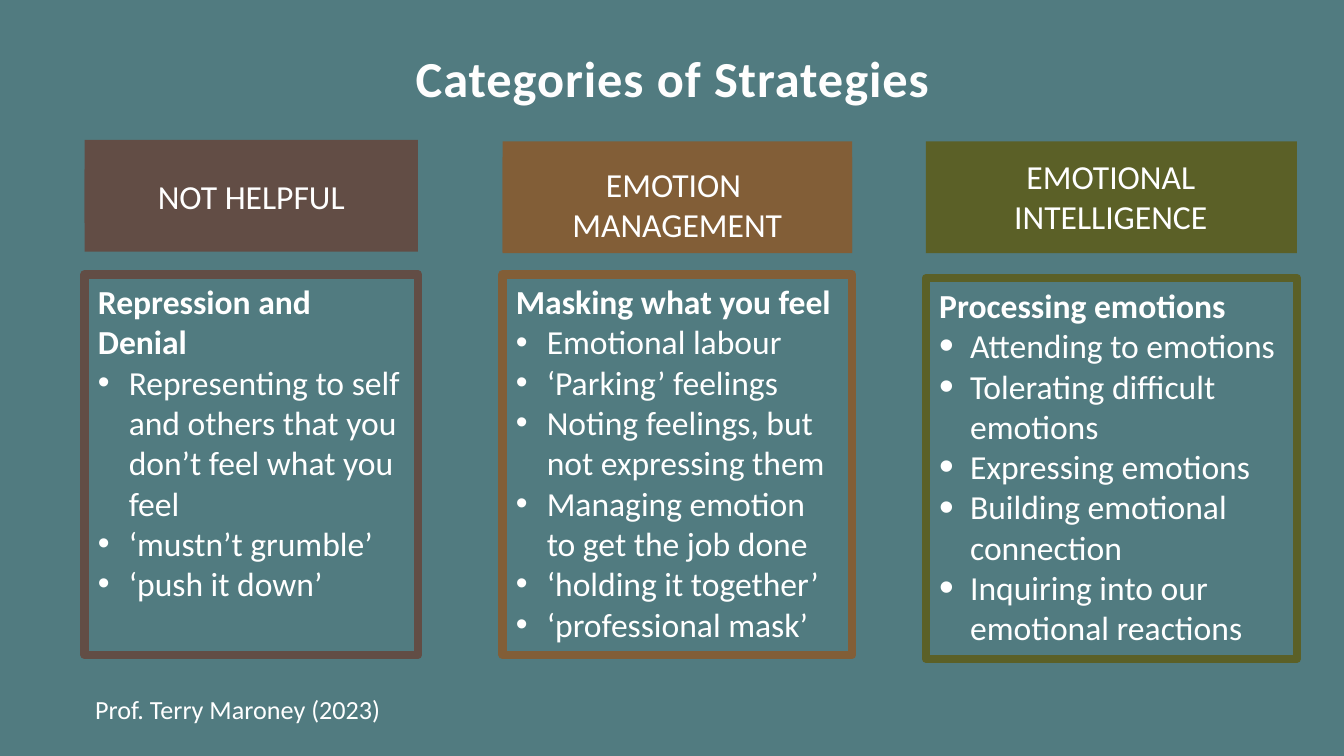
"""Build the slide "Categories of Strategies": three headed columns of strategies."""
import pptx
import pptx.dml.color
import pptx.enum.shapes
import pptx.enum.text
import pptx.oxml
import pptx.oxml.ns
import pptx.util

RGBColor = pptx.dml.color.RGBColor
TEAL = RGBColor(0x51, 0x7B, 0x80)
BROWN = RGBColor(0x62, 0x4D, 0x45)
OCHRE = RGBColor(0x82, 0x5E, 0x37)
OLIVE = RGBColor(0x5B, 0x60, 0x27)
WHITE = RGBColor(0xFF, 0xFF, 0xFF)
OFF_WHITE = RGBColor(0xFE, 0xFE, 0xFE)

CENTER = pptx.enum.text.PP_ALIGN.CENTER
LEFT = pptx.enum.text.PP_ALIGN.LEFT
TOP = pptx.enum.text.MSO_ANCHOR.TOP
GROW = pptx.enum.text.MSO_AUTO_SIZE.SHAPE_TO_FIT_TEXT
RECTANGLE = pptx.enum.shapes.MSO_SHAPE.RECTANGLE
INDENT = pptx.util.Inches(0.23)
LARGE_BULLET = '<a:buClr {0}><a:srgbClr val="FFFFFF"/></a:buClr>', '<a:buSzPct {0} val="125000"/>'
BULLET = '<a:buFont {0} typeface="Arial"/>', '<a:buChar {0} char="•"/>'

deck = pptx.Presentation()
deck.slide_width = pptx.util.Inches(10)
deck.slide_height = deck.slide_width * 9 // 16
page = deck.slides.add_slide(deck.slide_layouts[5])
page.background.fill.solid()
page.background.fill.fore_color.rgb = TEAL


def place(left, top, width, height):
    """Turn percentages of the slide into lengths."""
    return (int(deck.slide_width * left / 100), int(deck.slide_height * top / 100),
            int(deck.slide_width * width / 100), int(deck.slide_height * height / 100))


def write(para, text, size=18, bold=False, align=LEFT, color=WHITE):
    """Add one formatted run to a paragraph."""
    para.alignment = align
    span = para.add_run()
    span.text = text
    span.font.name = "Calibri"
    span.font.size = pptx.util.Pt(size)
    span.font.bold = bold
    span.font.color.rgb = color
    return span


title = page.shapes.title
title.left, title.top, title.width, title.height = place(19.7, 1.8, 60.7, 13.2)
frame = title.text_frame
frame.auto_size = pptx.enum.text.MSO_AUTO_SIZE.NONE
frame.vertical_anchor = pptx.enum.text.MSO_ANCHOR.BOTTOM
frame.margin_left = frame.margin_right = pptx.util.Inches(0.07)
frame.margin_top = frame.margin_bottom = pptx.util.Inches(0.04)
heading = write(frame.paragraphs[0], "Categories of Strategies", 27, True, CENTER, OFF_WHITE)
heading.font._element.set("spc", "50")

columns = [
    (BROWN, 6.3, 24.8, 18.5, (6.3, 22.4, 24.8, 7.1), ["NOT HELPFUL"], 36.3, (),
     ["Repression and Denial",
      "Representing to self and others that you don’t feel what you feel",
      "‘mustn’t grumble’", "‘push it down’"]),
    (OCHRE, 37.4, 26, 18.7, (37.4, 20.8, 26, 12.6), ["EMOTION ", "MANAGEMENT"], 36.3, (),
     ["Masking what you feel", "Emotional labour", "‘Parking’ feelings",
      "Noting feelings, but not expressing them", "Managing emotion to get the job done",
      "‘holding it together’", "‘professional mask’"]),
    (OLIVE, 68.9, 27.6, 18.7, (73.2, 19.75, 18.9, 12.6), ["EMOTIONAL INTELLIGENCE"], 36.8,
     LARGE_BULLET,
     ["Processing emotions", "Attending to emotions", "Tolerating difficult emotions",
      "Expressing emotions", "Building emotional connection",
      "Inquiring into our emotional reactions"]),
]

for color, left, width, band_top, label_area, label_lines, list_top, bullet_style, items in columns:
    band = page.shapes.add_shape(RECTANGLE, *place(left, band_top, width, 14.8))
    label = page.shapes.add_shape(RECTANGLE, *place(*label_area))
    panel = page.shapes.add_shape(RECTANGLE, *place(left, list_top, width, 50.35))
    for box in (band, label):
        box.fill.solid()
        box.fill.fore_color.rgb = color
        box.line.fill.background()
    panel.fill.background()
    panel.line.color.rgb = color
    panel.line.width = pptx.util.Pt(4.5)
    for box in (band, label, panel):
        box.shadow.inherit = False
    for box, lines, align in ((label, label_lines, CENTER), (panel, items, LEFT)):
        frame = box.text_frame
        frame.word_wrap = True
        frame.auto_size = GROW
        frame.vertical_anchor = TOP
        for number, text in enumerate(lines):
            para = frame.add_paragraph() if number else frame.paragraphs[0]
            if box is panel and number:
                properties = para._p.get_or_add_pPr()
                properties.set("marL", str(INDENT))
                properties.set("indent", str(-INDENT))
                for element in (*bullet_style, *BULLET):
                    properties.append(pptx.oxml.parse_xml(
                        element.format(pptx.oxml.ns.nsdecls("a"))))
            write(para, text, bold=box is panel and number == 0, align=align)

credit = page.shapes.add_textbox(*place(6.1, 90.9, 24.8, 6.05))
credit.text_frame.word_wrap = True
credit.text_frame.auto_size = GROW
write(credit.text_frame.paragraphs[0], "Prof. Terry Maroney (2023)", 14)

deck.save("out.pptx")
